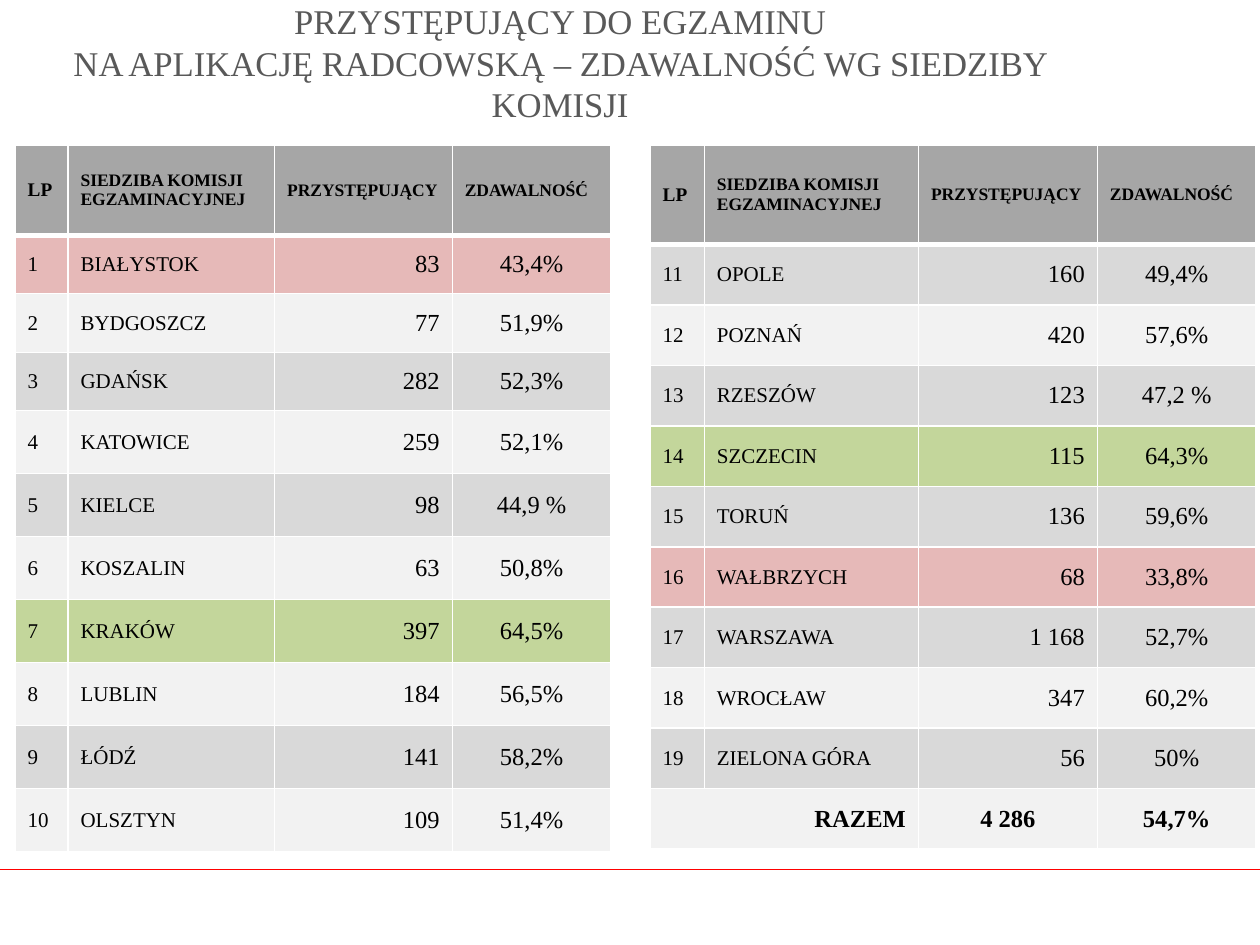
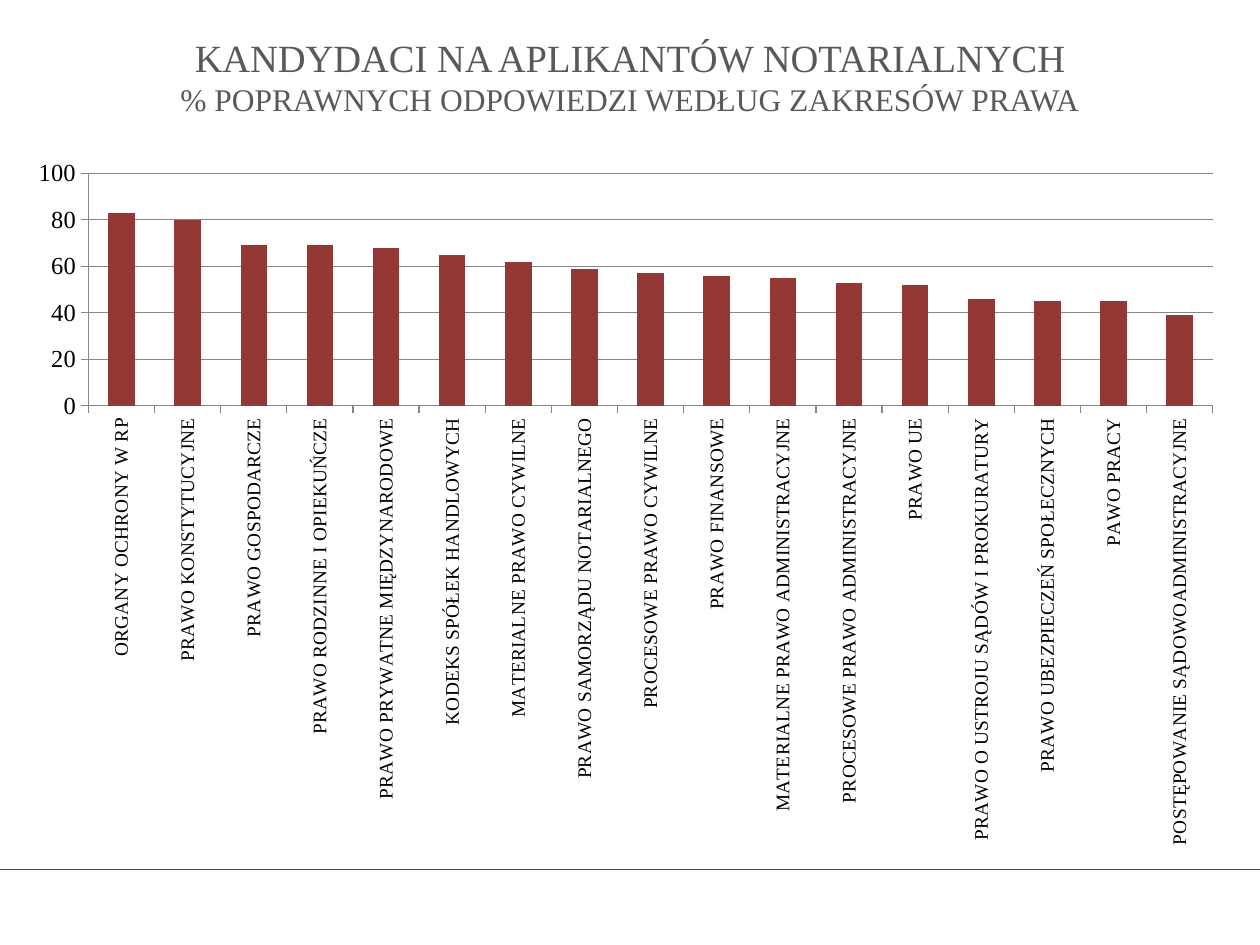
from lxml import etree
from pptx import Presentation, util as u
from pptx.chart import data
from pptx.dml import color
from pptx.enum import chart as charts, shapes, text
from pptx.oxml import ns

COLOURS = {"title": "595959", "black": "000000", "white": "FFFFFF", "rule": "FF0000",
           "header": "A6A6A6", "odd": "D9D9D9", "even": "F2F2F2",
           "lowest": "E6B9B8", "highest": "C3D69B", "bar": "953735", "axis": "868686"}
SERIF = "Times New Roman"
LEFT, CENTRE, RIGHT = text.PP_ALIGN.LEFT, text.PP_ALIGN.CENTER, text.PP_ALIGN.RIGHT


def write(frame, words, size=12, bold=False, align=LEFT, colour="black", right_indent=0):
    frame.word_wrap = True
    frame.vertical_anchor = text.MSO_ANCHOR.MIDDLE
    line = frame.paragraphs[0] if not frame.text else frame.add_paragraph()
    line.alignment = align
    if right_indent:
        line._p.get_or_add_pPr().set("marR", str(u.Inches(right_indent)))
    run = line.add_run()
    run.text = words
    run.font.name, run.font.size, run.font.bold = SERIF, u.Pt(size), bold
    run.font.color.rgb = color.RGBColor.from_string(COLOURS[colour])


def paint(cell, fill, top=1, bottom=1):
    properties = cell._tc.get_or_add_tcPr()
    for side, width in (("L", 1), ("R", 1), ("T", top), ("B", bottom)):
        border = etree.SubElement(properties, ns.qn(f"a:ln{side}"), w=str(u.Pt(width)))
        solid = etree.SubElement(border, ns.qn("a:solidFill"))
        etree.SubElement(solid, ns.qn("a:srgbClr"), val=COLOURS["white"])
    cell.fill.solid()
    cell.fill.fore_color.rgb = color.RGBColor.from_string(COLOURS[fill])


deck = Presentation()
deck.slide_width, deck.slide_height = u.Inches(10), u.Inches(7.5)

titles = [
    ((0, 0, 10, 0.99), [("PRZYSTĘPUJĄCY DO EGZAMINU", 19.8, 1.11),
                        ("NA APLIKACJĘ RADCOWSKĄ – ZDAWALNOŚĆ WG SIEDZIBY KOMISJI", 19.8, 0)]),
    ((0.5, 0.13, 9, 0.94), [("KANDYDACI NA APLIKANTÓW NOTARIALNYCH", 22, 0),
                            ("% POPRAWNYCH ODPOWIEDZI WEDŁUG ZAKRESÓW PRAWA", 18, 0)]),
]
for place, lines in titles:
    slide = deck.slides.add_slide(deck.slide_layouts[6])
    heading = slide.shapes.add_textbox(*map(u.Inches, place)).text_frame
    for words, size, indent in lines:
        write(heading, words, size=size, align=CENTRE, colour="title", right_indent=indent)
    footer_rule = slide.shapes.add_connector(
        shapes.MSO_CONNECTOR.STRAIGHT, 0, u.Inches(6.9), u.Inches(10), u.Inches(6.9))
    footer_rule.line.color.rgb = color.RGBColor.from_string(COLOURS["rule"])
    footer_rule.line.width = u.Pt(1)
    etree.SubElement(footer_rule._element.spPr, ns.qn("a:effectLst"))

pass_rates, law_areas = deck.slides

headers = [("LP", 11), ("SIEDZIBA KOMISJI EGZAMINACYJNEJ", 10),
           ("PRZYSTĘPUJĄCY", 10), ("ZDAWALNOŚĆ", 10)]
committees = [
    ("BIAŁYSTOK", "83", "43,4%"), ("BYDGOSZCZ", "77", "51,9%"),
    ("GDAŃSK", "282", "52,3%"), ("KATOWICE", "259", "52,1%"),
    ("KIELCE", "98", "44,9 %"), ("KOSZALIN", "63", "50,8%"),
    ("KRAKÓW", "397", "64,5%"), ("LUBLIN", "184", "56,5%"),
    ("ŁÓDŹ", "141", "58,2%"), ("OLSZTYN", "109", "51,4%"),
    ("OPOLE", "160", "49,4%"), ("POZNAŃ", "420", "57,6%"),
    ("RZESZÓW", "123", "47,2 %"), ("SZCZECIN", "115", "64,3%"),
    ("TORUŃ", "136", "59,6%"), ("WAŁBRZYCH", "68", "33,8%"),
    ("WARSZAWA", "1 168", "52,7%"), ("WROCŁAW", "347", "60,2%"),
    ("ZIELONA GÓRA", "56", "50%"), ("RAZEM", "4 286", "54,7%"),
]
marked = {"BIAŁYSTOK": "lowest", "WAŁBRZYCH": "lowest",
          "KRAKÓW": "highest", "SZCZECIN": "highest"}
halves = [
    (0.12, 0, [0.42, 1.64, 1.41, 1.26], [0.72, 0.46, 0.47, 0.46] + [0.5] * 7),
    (5.16, 10, [0.43, 1.7, 1.42, 1.26], [0.79] + [0.48] * 10),
]
for left, first, widths, heights in halves:
    results = pass_rates.shapes.add_table(
        11, 4, u.Inches(left), u.Inches(1.15),
        u.Inches(sum(widths)), u.Inches(sum(heights))).table
    for column, width in zip(results.columns, widths):
        column.width = u.Inches(width)
    for row, height in zip(results.rows, heights):
        row.height = u.Inches(height)
    for cell, (words, size) in zip(results.rows[0].cells, headers):
        paint(cell, "header", bottom=3)
        write(cell.text_frame, words, size=size, bold=True)
        cell.vertical_anchor = text.MSO_ANCHOR.MIDDLE
    for position in range(1, 11):
        number = first + position
        city, candidates, rate = committees[number - 1]
        fill = marked.get(city, "odd" if number % 2 else "even")
        cells = list(results.rows[position].cells)
        for cell in cells:
            paint(cell, fill, top=3 if position == 1 else 1)
            cell.vertical_anchor = text.MSO_ANCHOR.MIDDLE
        if city == "RAZEM":
            cells[0].merge(cells[1])
            entries = [(cells[0], city, 14, RIGHT), (cells[2], candidates, 14, CENTRE),
                       (cells[3], rate, 14, CENTRE)]
        else:
            entries = zip(cells, (str(number), city, candidates, rate),
                          (12, 12, 14, 14), (LEFT, LEFT, RIGHT, CENTRE))
        for cell, words, size, align in entries:
            write(cell.text_frame, words, size=size, align=align, bold=city == "RAZEM")

scores = [
    ("ORGANY OCHRONY W RP", 83), ("PRAWO KONSTYTUCYJNE", 80),
    ("PRAWO GOSPODARCZE", 69), ("PRAWO RODZINNE I OPIEKUŃCZE", 69),
    ("PRAWO PRYWATNE MIĘDZYNARODOWE", 68), ("KODEKS SPÓŁEK HANDLOWYCH", 65),
    ("MATERIALNE PRAWO CYWILNE", 62), ("PRAWO SAMORZĄDU NOTARIALNEGO", 59),
    ("PROCESOWE PRAWO CYWILNE", 57), ("PRAWO FINANSOWE", 56),
    ("MATERIALNE PRAWO ADMINISTRACYJNE", 55), ("PROCESOWE PRAWO ADMINISTRACYJNE", 53),
    ("PRAWO UE", 52), ("PRAWO O USTROJU SĄDÓW I PROKURATURY", 46),
    ("PRAWO UBEZPIECZEŃ SPOŁECZNYCH", 45), ("PAWO PRACY", 45),
    ("POSTĘPOWANIE SĄDOWOADMINISTRACYJNE", 39),
]
answers = data.CategoryChartData(number_format="General")
answers.categories = [area for area, score in scores]
answers.add_series("Series 1", [score for area, score in scores])
score_chart = law_areas.shapes.add_chart(
    charts.XL_CHART_TYPE.COLUMN_CLUSTERED,
    *map(u.Inches, (0.12, 1.15, 9.7, 5.67)), answers).chart
score_chart.has_legend = score_chart.has_title = False
score_chart.font.name, score_chart.font.size = "Calibri", u.Pt(18)
score_chart.font.color.rgb = color.RGBColor.from_string(COLOURS["black"])

columns = score_chart.plots[0]
columns.gap_width, columns.vary_by_categories = 150, False
bars = columns.series[0].format.fill
bars.solid()
bars.fore_color.rgb = color.RGBColor.from_string(COLOURS["bar"])

area_axis, score_axis = score_chart.category_axis, score_chart.value_axis
score_axis.minimum_scale, score_axis.maximum_scale, score_axis.major_unit = 0, 100, 20
score_axis.has_major_gridlines = True
for axis, size in ((area_axis, 11), (score_axis, 14)):
    axis.major_tick_mark = charts.XL_TICK_MARK.OUTSIDE
    labels = axis.tick_labels.font
    labels.name, labels.size = SERIF, u.Pt(size)
    labels.color.rgb = color.RGBColor.from_string(COLOURS["black"])
for line in (area_axis.format.line, score_axis.format.line,
             score_axis.major_gridlines.format.line):
    line.color.rgb = color.RGBColor.from_string(COLOURS["axis"])
    line.width = u.Pt(0.75)
label_body = area_axis._element.find(ns.qn("c:txPr")).find(ns.qn("a:bodyPr"))
label_body.set("rot", "-5400000")
label_body.set("vert", "horz")

plot_area = score_chart._chartSpace.chart.plotArea
for old_layout in plot_area.findall(ns.qn("c:layout")):
    plot_area.remove(old_layout)
layout = etree.Element(ns.qn("c:layout"))
plot_area.insert(0, layout)
manual = etree.SubElement(layout, ns.qn("c:manualLayout"))
for tag, value in (("layoutTarget", "inner"), ("xMode", "edge"), ("yMode", "edge"),
                   ("x", 0.06), ("y", 0.04), ("w", 0.92), ("h", 0.325)):
    etree.SubElement(manual, ns.qn(f"c:{tag}"), val=str(value))

deck.save("out.pptx")
